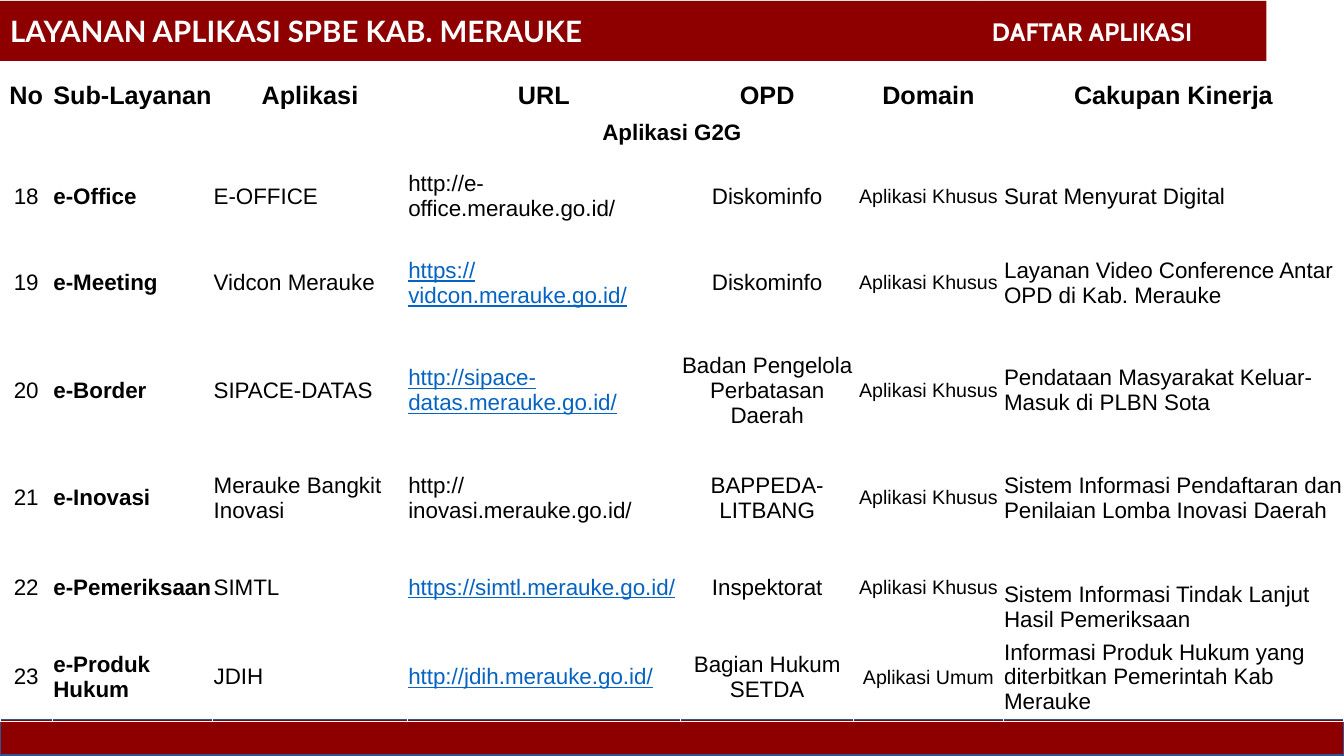
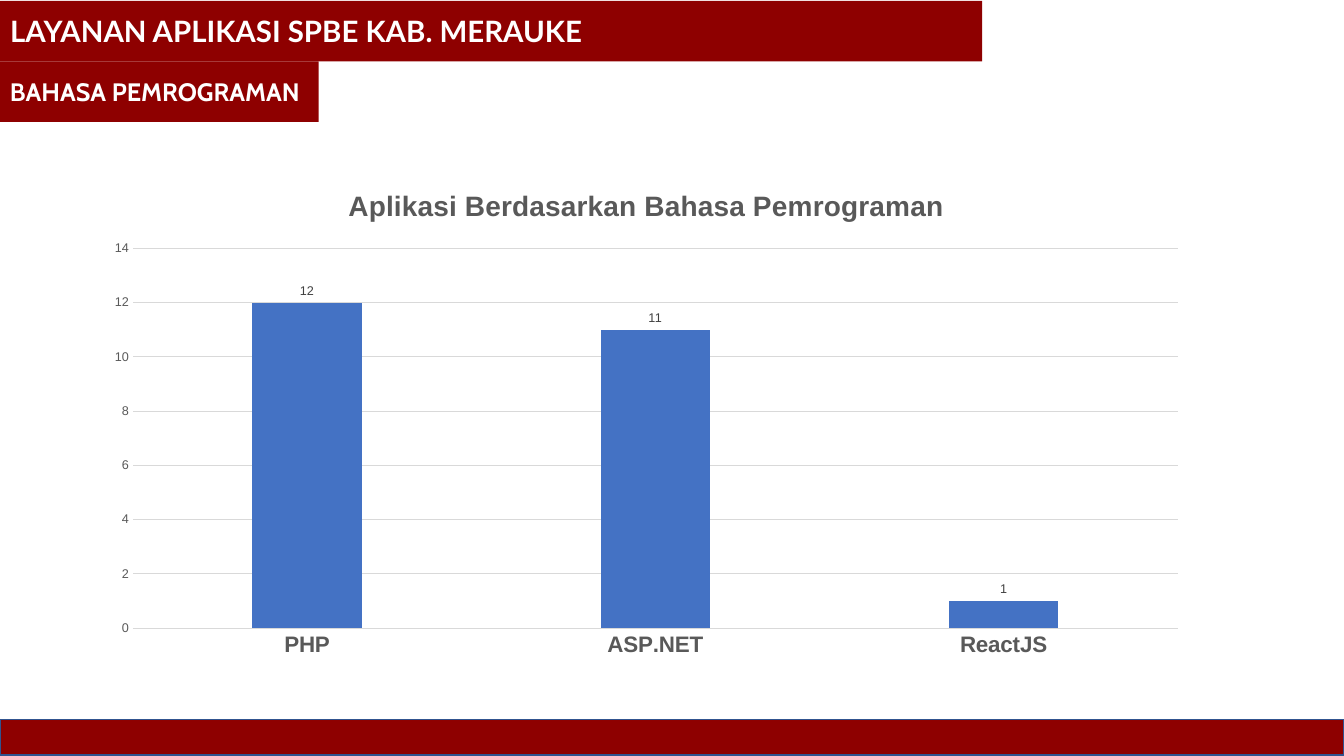
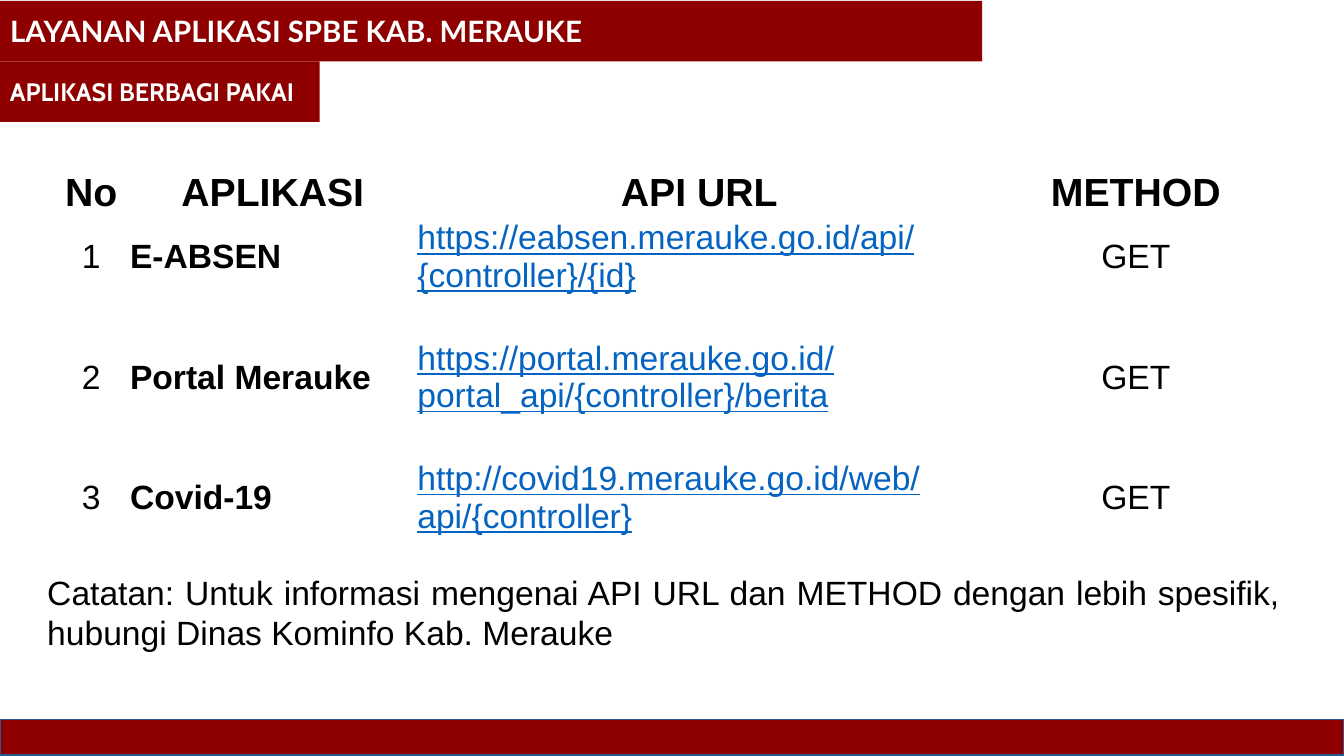
from pptx import Presentation
from pptx.chart.data import CategoryChartData
from pptx.dml.color import RGBColor
from pptx.enum.chart import XL_CHART_TYPE, XL_LABEL_POSITION, XL_TICK_MARK
from pptx.enum.shapes import MSO_SHAPE
from pptx.enum.text import MSO_ANCHOR, MSO_AUTO_SIZE, PP_ALIGN
from pptx.util import Inches, Pt

COLORS = {
    "band": "8E0000", "edge": "31538F", "white": "FFFFFF", "black": "000000",
    "link": "0563C1", "bar": "4472C4", "grid": "D9D9D9", "axis": "595959", "label": "404040",
}
COLORS = {name: RGBColor.from_string(value) for name, value in COLORS.items()}
LEFT, CENTER = PP_ALIGN.LEFT, PP_ALIGN.CENTER


def write(frame, text, size, font="Arial", color="black", bold=False, align=LEFT):
    frame.word_wrap = True
    frame.vertical_anchor = MSO_ANCHOR.MIDDLE
    para = frame.paragraphs[0]
    para.alignment = align
    span = para.add_run()
    span.text = text
    span.font.size = Pt(size)
    span.font.name = font
    span.font.bold = bold
    span.font.color.rgb = COLORS[color]
    return span


def add_grid(page, left, top, columns, heights, rows, header_size, linked):
    width = sum(column[1] for column in columns)
    frame = page.shapes.add_table(len(heights), len(columns), Inches(left), Inches(top),
                                  Inches(width), Inches(sum(heights)))
    table = frame.table
    table.first_row = False
    table.horz_banding = False
    for row, height in zip(table.rows, heights):
        row.height = Inches(height)
    for cell in table.iter_cells():
        cell.fill.background()
        cell.margin_left = cell.margin_right = cell.margin_top = Inches(0.01)
        cell.margin_bottom = 0
        cell.vertical_anchor = MSO_ANCHOR.MIDDLE
    first_row = len(heights) - len(rows)
    for index, (name, width, size, bold, align) in enumerate(columns):
        table.columns[index].width = Inches(width)
        header = table.cell(0, index)
        write(header.text_frame, name, header_size, bold=True, align=CENTER)
        header.vertical_anchor = MSO_ANCHOR.BOTTOM
        for row_index, values in enumerate(rows, first_row):
            is_link = "URL" in name and values[0] in linked
            cell = table.cell(row_index, index)
            span = write(cell.text_frame, values[index], size, bold=bold, align=align,
                         color="link" if is_link else "black")
            span.font.underline = is_link
            cell.vertical_anchor = MSO_ANCHOR.MIDDLE
    return table


deck = Presentation()
deck.slide_width = Inches(13.33)
deck.slide_height = Inches(7.5)

sections = [
    ("DAFTAR APLIKASI", 9.74, 0.01, 2.82),
    ("BAHASA PEMROGRAMAN", 0, 0.61, 3.16),
    ("APLIKASI BERBAGI PAKAI", 0, 0.61, 3.17),
]
pages = []
for section, left, top, width in sections:
    page = deck.slides.add_slide(deck.slide_layouts[5])
    pages.append(page)

    footer = page.shapes.add_shape(MSO_SHAPE.RECTANGLE, 0, Inches(7.14), Inches(13.33), Inches(0.35))
    footer.shadow.inherit = False
    footer.fill.solid()
    footer.fill.fore_color.rgb = COLORS["band"]
    footer.line.color.rgb = COLORS["edge"]
    footer.line.width = Pt(1)

    title = page.shapes.title
    title.left, title.top, title.width, title.height = 0, Inches(0.01), Inches(9.74), Inches(0.6)
    title.text_frame.auto_size = MSO_AUTO_SIZE.NONE
    write(title.text_frame, "LAYANAN APLIKASI SPBE KAB. MERAUKE", 21, "Lato", "white", True)

    tab = page.shapes.add_shape(MSO_SHAPE.RECTANGLE, Inches(left), Inches(top), Inches(width), Inches(0.6))
    tab.shadow.inherit = False
    write(tab.text_frame, section, 18, "Cabin", "white", True)

    for band in (title, tab):
        band.fill.solid()
        band.fill.fore_color.rgb = COLORS["band"]
        band.line.fill.background()

app_columns = [
    ("No", 0.52, 16, False, CENTER),
    ("Sub-Layanan", 1.59, 16, True, LEFT),
    ("Aplikasi", 1.93, 16, False, LEFT),
    ("URL", 2.71, 16, False, LEFT),
    ("OPD", 1.72, 16, False, CENTER),
    ("Domain", 1.48, 14, False, CENTER),
    ("Cakupan Kinerja", 3.38, 16, False, LEFT),
]
app_rows = [
    ("18", "e-Office", "E-OFFICE", "http://e-office.merauke.go.id/", "Diskominfo",
     "Aplikasi Khusus", "Surat Menyurat Digital"),
    ("19", "e-Meeting", "Vidcon Merauke", "https://vidcon.merauke.go.id/", "Diskominfo",
     "Aplikasi Khusus", "Layanan Video Conference Antar OPD di Kab. Merauke"),
    ("20", "e-Border", "SIPACE-DATAS", "http://sipace-datas.merauke.go.id/",
     "Badan Pengelola Perbatasan Daerah", "Aplikasi Khusus",
     "Pendataan Masyarakat Keluar-Masuk di PLBN Sota"),
    ("21", "e-Inovasi", "Merauke Bangkit Inovasi", "http://inovasi.merauke.go.id/",
     "BAPPEDA-LITBANG", "Aplikasi Khusus",
     "Sistem Informasi Pendaftaran dan Penilaian Lomba Inovasi Daerah"),
    ("22", "e-Pemeriksaan", "SIMTL", "https://simtl.merauke.go.id/", "Inspektorat",
     "Aplikasi Khusus", "Sistem Informasi Tindak Lanjut Hasil Pemeriksaan"),
    ("23", "e-Produk Hukum", "JDIH", "http://jdih.merauke.go.id/", "Bagian Hukum SETDA",
     "Aplikasi Umum", "Informasi Produk Hukum yang diterbitkan Pemerintah Kab Merauke"),
]
app_heights = [0.48, 0.44, 0.83, 0.89, 1.24, 0.89, 0.89, 0.89]
app_table = add_grid(pages[0], 0, 0.61, app_columns, app_heights, app_rows, 18,
                     {"19", "20", "22", "23"})
group = app_table.cell(1, 0)
group.merge(app_table.cell(1, 6))
write(group.text_frame, "Aplikasi G2G", 16, bold=True, align=CENTER)
app_table.cell(6, 6).vertical_anchor = MSO_ANCHOR.BOTTOM

data = CategoryChartData()
data.categories = ["PHP", "ASP.NET", "ReactJS"]
data.add_series("Series 1", [12, 11, 1])
chart = pages[1].shapes.add_chart(XL_CHART_TYPE.COLUMN_CLUSTERED, Inches(0.92), Inches(1.66),
                                  Inches(10.98), Inches(4.95), data).chart
chart.has_legend = False
chart.font.name = "Arial"
chart.font.size = Pt(10)
chart.has_title = True
write(chart.chart_title.text_frame, "Aplikasi Berdasarkan Bahasa Pemrograman", 20,
      color="axis", bold=True, align=CENTER)
chart.chart_title.include_in_layout = False

plot = chart.plots[0]
plot.gap_width = 219
plot.overlap = -27
plot.vary_by_categories = False
bars = plot.series[0]
bars.format.fill.solid()
bars.format.fill.fore_color.rgb = COLORS["bar"]
plot.has_data_labels = True
labels = plot.data_labels
labels.show_value = True
labels.position = XL_LABEL_POSITION.OUTSIDE_END

for part, size, bold, color in [(chart.category_axis.tick_labels, 16, True, "axis"),
                                (chart.value_axis.tick_labels, 9, False, "axis"),
                                (labels, 9, False, "label")]:
    part.font.name = "Arial"
    part.font.size = Pt(size)
    part.font.bold = bold
    part.font.color.rgb = COLORS[color]
for axis in (chart.category_axis, chart.value_axis):
    axis.major_tick_mark = XL_TICK_MARK.NONE
    axis.minor_tick_mark = XL_TICK_MARK.NONE
chart.value_axis.minimum_scale = 0
chart.value_axis.maximum_scale = 14
chart.value_axis.major_unit = 2
chart.value_axis.format.line.fill.background()
for line in (chart.category_axis.format.line, chart.value_axis.major_gridlines.format.line):
    line.color.rgb = COLORS["grid"]
    line.width = Pt(0.75)

api_columns = [
    ("No", 0.75, 24, False, CENTER),
    ("APLIKASI", 2.85, 24, True, LEFT),
    ("API URL", 5.61, 24, False, LEFT),
    ("METHOD", 3.05, 24, False, CENTER),
]
api_rows = [
    ("1", "E-ABSEN", "https://eabsen.merauke.go.id/api/{controller}/{id}", "GET"),
    ("2", "Portal Merauke", "https://portal.merauke.go.id/portal_api/{controller}/berita", "GET"),
    ("3", "Covid-19", "http://covid19.merauke.go.id/web/api/{controller}", "GET"),
]
add_grid(pages[2], 0.53, 1.57, api_columns, [0.56, 0.83, 1.56, 0.83], api_rows, 28, {"1", "2", "3"})

note = pages[2].shapes.add_textbox(Inches(0.37), Inches(5.61), Inches(12.42), Inches(0.93))
note.fill.solid()
note.fill.fore_color.rgb = COLORS["white"]
write(note.text_frame,
      "Catatan: Untuk informasi mengenai API URL dan METHOD dengan lebih spesifik, "
      "hubungi Dinas Kominfo Kab. Merauke", 24, align=PP_ALIGN.JUSTIFY)

deck.save("out.pptx")
